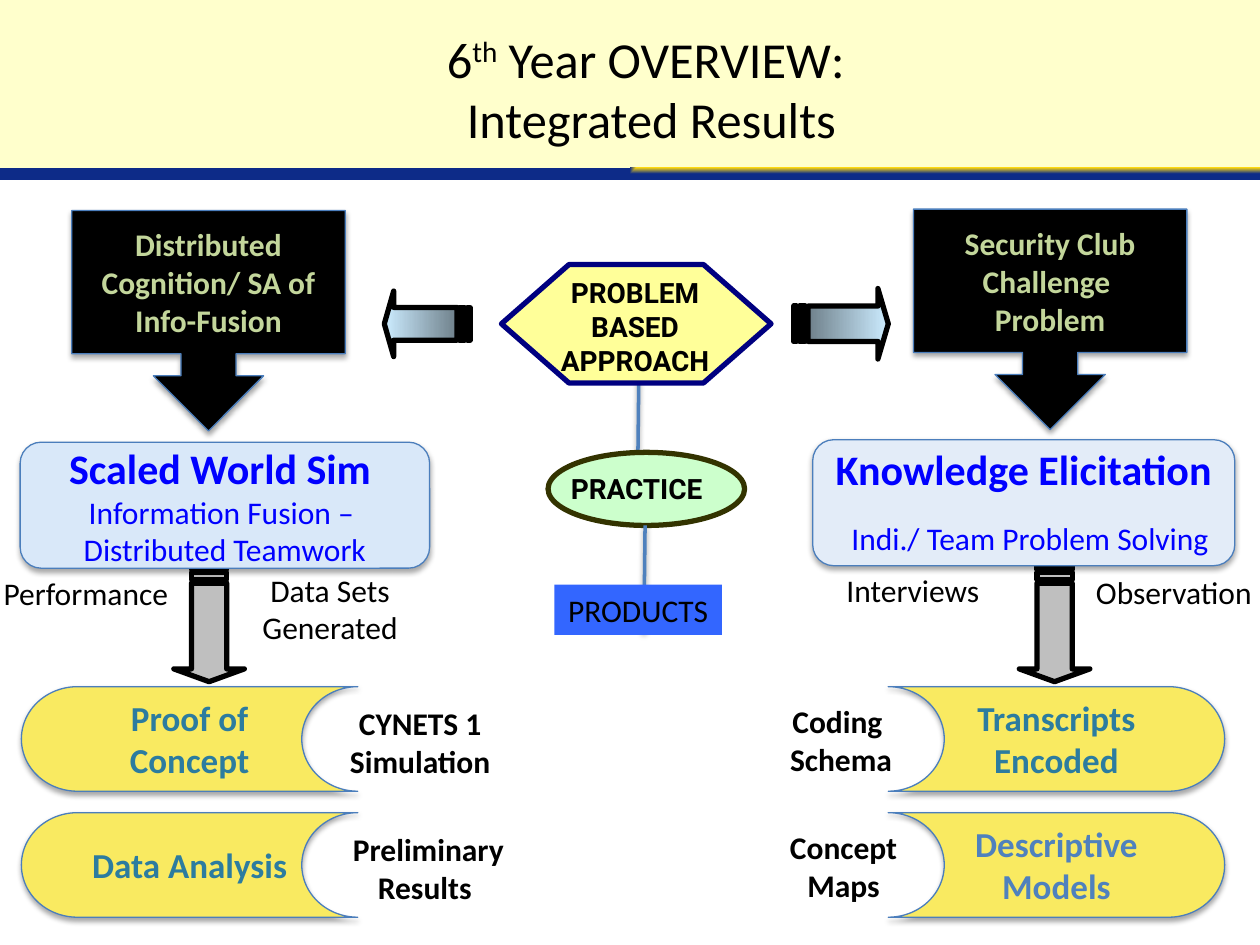
from math import hypot

from lxml.etree import SubElement
from pptx import Presentation
from pptx.dml.color import RGBColor
from pptx.enum.shapes import MSO_CONNECTOR, MSO_SHAPE as Preset
from pptx.enum.text import MSO_ANCHOR as Anchor, PP_ALIGN as Align
from pptx.oxml import parse_xml
from pptx.oxml.ns import nsdecls, qn
from pptx.util import Inches, Pt

BLACK = RGBColor(0x00, 0x00, 0x00)
BLUE_TEXT = RGBColor(0x00, 0x00, 0xFF)
CREAM = RGBColor(0xFF, 0xFF, 0xCC)
YELLOW = RGBColor(0xFF, 0xFF, 0x99)
NAVY = RGBColor(0x00, 0x00, 0x80)
MINT = RGBColor(0xCC, 0xFF, 0xCC)
OLIVE = RGBColor(0x33, 0x33, 0x00)
GREY = RGBColor(0xBF, 0xBF, 0xBF)
SLATE = RGBColor(0x5E, 0x6D, 0x76)
SKY = RGBColor(0xCC, 0xEC, 0xFF)
EDGE = RGBColor(0x4B, 0x7E, 0xBC)
STEEL = RGBColor(0x4F, 0x81, 0xBD)
TEAL = RGBColor(0x2C, 0x7C, 0x9F)
GOLD = RGBColor(0xF9, 0xEA, 0x61)
SAGE = RGBColor(0xC3, 0xD6, 0x9B)
PALE_LEFT = RGBColor(0xD9, 0xE8, 0xF9)
PALE_RIGHT = RGBColor(0xE3, 0xEC, 0xF8)
PRODUCT_BLUE = RGBColor(0x33, 0x66, 0xFF)
BAND_GOLD = RGBColor(0xFE, 0xD9, 0x10)
BAND_BLUE = RGBColor(0x0D, 0x2B, 0x88)


def add_shadow(shape):
    """Give a shape or connector a soft shadow below it."""
    properties = shape._element.spPr
    effects = properties.find(qn("a:effectLst"))
    if effects is None:
        effects = SubElement(properties, qn("a:effectLst"))
    effects.append(parse_xml(
        f'<a:outerShdw {nsdecls("a")} blurRad="39370" dist="22860" dir="5400000" rotWithShape="0">'
        '<a:srgbClr val="000000"><a:alpha val="35000"/></a:srgbClr></a:outerShdw>'))


def add_spans(para, spans, color, font):
    """Add (text, size, bold) spans to a paragraph."""
    for text, size, bold in spans:
        span = para.add_run()
        span.text = text
        span.font.name = font
        span.font.size = Pt(size)
        span.font.bold = bold
        span.font.color.rgb = color


def write(shape, lines, size=18, color=BLACK, bold=False, font="Calibri", align=Align.CENTER):
    """Fill a shape with lines, each a string or a list of spans."""
    frame = shape.text_frame
    for index, line in enumerate(lines):
        para = frame.add_paragraph() if index else frame.paragraphs[0]
        para.alignment = align
        spans = [(line, size, bold)] if isinstance(line, str) else line
        add_spans(para, spans, color, font)


def add_preset(slide, preset, place, fill, line=None, width=0.75, shadow=False):
    """Add a solid preset shape."""
    shape = slide.shapes.add_shape(preset, *map(Inches, place))
    shape.shadow.inherit = False
    shape.fill.solid()
    shape.fill.fore_color.rgb = fill
    if line is None:
        shape.line.fill.background()
    else:
        shape.line.color.rgb = line
        shape.line.width = Pt(width)
    if shadow:
        add_shadow(shape)
    return shape


def add_label(slide, place, lines, wrap=False, margins=None, **style):
    """Add a text box."""
    box = slide.shapes.add_textbox(*map(Inches, place))
    frame = box.text_frame
    frame.word_wrap = wrap
    if margins:
        frame.margin_top, frame.margin_bottom = map(Inches, margins)
    write(box, lines, **style)
    return box


def add_card(slide, preset, place, fill, lines, flip=False, **style):
    """Add an outlined, shadowed shape with centred text."""
    card = add_preset(slide, preset, place, fill, EDGE, shadow=True)
    if flip:
        card._element.spPr.xfrm.set("flipH", "1")
    card.text_frame.word_wrap = True
    card.text_frame.vertical_anchor = Anchor.MIDDLE
    write(card, lines, **style)


def add_link(slide, start, end):
    """Add a straight connector with a shadow."""
    points = map(Inches, start + end)
    link = slide.shapes.add_connector(MSO_CONNECTOR.STRAIGHT, *points)
    link.line.color.rgb = STEEL
    link.line.width = Pt(2)
    add_shadow(link)


def add_striped_arrow(slide, tail, tip, half, colors):
    """Draw a block arrow with two stripes at its tail."""
    run, rise = tip[0] - tail[0], tip[1] - tail[1]
    length = hypot(run, rise)

    def point(along, across):
        offset = across * half / length
        return (Inches(tail[0] + along * run - offset * rise),
                Inches(tail[1] + along * rise + offset * run))

    head = [(0.89, 2), (0.89, 1), (0.15, 1), (0.15, -1), (0.89, -1), (0.89, -2), (1, 0)]
    stripes = [[(a, 1), (b, 1), (b, -1), (a, -1)] for a, b in ((0.06, 0.12), (0, 0.03))]
    builder = slide.shapes.build_freeform(*point(*head[0]), scale=1.0)
    builder.add_line_segments([point(*corner) for corner in head[1:]], close=True)
    for stripe in stripes:
        builder.move_to(*point(*stripe[0]))
        builder.add_line_segments([point(*corner) for corner in stripe[1:]], close=True)
    arrow = builder.convert_to_shape()
    arrow.shadow.inherit = False
    if len(colors) == 1:
        arrow.fill.solid()
        arrow.fill.fore_color.rgb = colors[0]
    else:
        arrow.fill.gradient()
        arrow.fill.gradient_angle = 0
        for stop, color in zip(arrow.fill.gradient_stops, colors):
            stop.color.rgb = color
    arrow.line.color.rgb = BLACK
    arrow.line.width = Pt(3)


def add_header(slide):
    """Draw the header, its gradient band and the title."""
    add_preset(slide, Preset.RECTANGLE, (0, 0, 10, 1.35), CREAM)
    band = add_preset(slide, Preset.RECTANGLE, (0, 1.33, 10, 0.1), BAND_BLUE)
    band.fill.gradient()
    for stop, color in zip(band.fill.gradient_stops, (BAND_GOLD, BAND_BLUE)):
        stop.color.rgb = color
    gradient = band._element.spPr.find(qn("a:gradFill"))
    gradient.replace(gradient.find(qn("a:lin")), parse_xml(
        f'<a:path {nsdecls("a")} path="rect"><a:fillToRect l="100000" b="100000"/></a:path>'))
    first = [("6", 28.8, False), ("th", 28.8, False), (" Year OVERVIEW:", 28.8, False)]
    title = add_label(slide, (1.25, 0.17, 7.75, 0.75), [first], wrap=True)
    para = title.text_frame.paragraphs[0]
    para.runs[1]._r.get_or_add_rPr().set("baseline", "30000")
    para.add_line_break()
    add_spans(para, [(" Integrated Results", 28.8, False)], BLACK, "Calibri")


def add_center(slide):
    """Draw the approach, practice and products column."""
    heading = dict(size=16, bold=True, font="Roboto", wrap=True)
    add_link(slide, (5.07, 3.01), (5.06, 3.87))
    hexagon = add_preset(slide, Preset.HEXAGON, (3.98, 2.1, 2.14, 0.94), YELLOW, NAVY, 3)
    hexagon.adjustments[0] = 0.57
    add_label(slide, (3.98, 2.19, 2.12, 0.76), ["PROBLEM", "BASED", "APPROACH"],
              margins=(0, 0), **heading)
    add_preset(slide, Preset.OVAL, (4.35, 3.59, 1.56, 0.58), MINT, OLIVE, 3)
    add_label(slide, (4.02, 3.69, 2.12, 0.38), ["PRACTICE "], margins=(0.05, 0), **heading)
    add_link(slide, (5.12, 4.17), (5.11, 5.02))
    products = add_label(slide, (4.4, 4.64, 1.33, 0.4), ["PRODUCTS"])
    products.fill.solid()
    products.fill.fore_color.rgb = PRODUCT_BLUE


def add_sides(slide):
    """Draw the two branches and their results."""
    add_striped_arrow(slide, (3.73, 2.57), (3.05, 2.57), 0.13, (SKY, SLATE))
    add_striped_arrow(slide, (6.3, 2.57), (7.05, 2.57), 0.14, (SLATE, SKY))
    for center in (1.66, 8.37):
        add_striped_arrow(slide, (center, 4.49), (center, 5.41), 0.14, (GREY,))
    for place, lines in (
        ((0.57, 1.67, 2.17, 1.75), ["Distributed Cognition/ SA of Info-Fusion"]),
        ((7.25, 1.66, 2.17, 1.75), ["Security Club", "Challenge ", "Problem"]),
    ):
        add_card(slide, Preset.DOWN_ARROW_CALLOUT, place, BLACK, lines, color=SAGE, bold=True)
    for place, fill, lines in (
        ((0.16, 3.51, 3.25, 1), PALE_LEFT,
         [[("Scaled World Sim ", 24, True), (" Information Fusion – ", 18, False)],
          "Distributed Teamwork"]),
        ((6.45, 3.49, 3.35, 1), PALE_RIGHT,
         [[("Knowledge Elicitation", 24, True)],
          [(" ", 32, False), ("Indi./ Team Problem Solving", 18, False)]]),
    ):
        add_card(slide, Preset.ROUNDED_RECTANGLE, place, fill, lines, color=BLUE_TEXT)
    for left, top, flip, color, lines in (
        (0.17, 5.45, False, TEAL, ["Proof of Concept"]),
        (0.17, 6.45, False, TEAL, ["Data Analysis"]),
        (7.05, 5.45, True, TEAL, ["Transcripts", "Encoded"]),
        (7.05, 6.45, True, STEEL, ["Descriptive", "Models"]),
    ):
        add_card(slide, Preset.FLOWCHART_STORED_DATA, (left, top, 2.67, 0.83), GOLD, lines,
                 flip, size=20, color=color, bold=True)
    for place, lines in (
        ((2.67, 5.54, 1.33, 0.71), ["CYNETS 1", "Simulation"]),
        ((2.6, 6.54, 1.6, 0.71), ["Preliminary", "Results "]),
        ((6.09, 5.52, 1.17, 0.71), ["Coding ", "Schema"]),
        ((6.09, 6.52, 1.21, 0.71), ["Concept", "Maps"]),
    ):
        add_label(slide, place, lines, bold=True)
    add_label(slide, (1.97, 4.48, 1.3, 0.71), ["Data Sets", "Generated"])
    for place, text in (
        ((-0.07, 4.51, 1.53, 0.4), "Performance"),
        ((6.62, 4.48, 1.27, 0.4), "Interviews"),
        ((8.6, 4.5, 1.46, 0.4), "Observation"),
    ):
        add_label(slide, place, [text], align=Align.LEFT)


def main():
    """Build the deck and save it."""
    deck = Presentation()
    deck.slide_width, deck.slide_height = Inches(10), Inches(7.5)
    page = deck.slides.add_slide(deck.slide_layouts[6])
    add_header(page)
    add_center(page)
    add_sides(page)
    deck.save("out.pptx")


if __name__ == "__main__":
    main()
